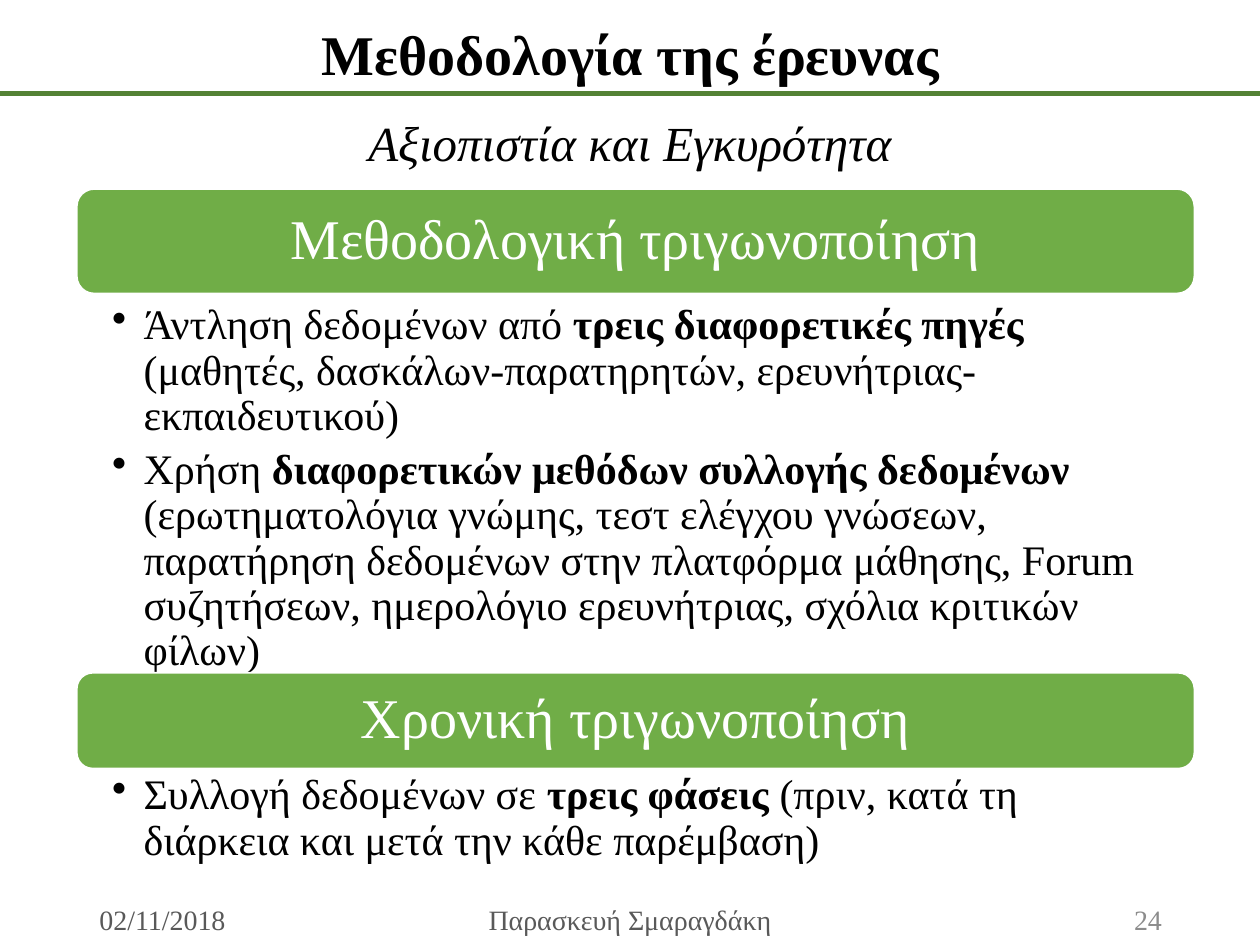
from lxml import etree
from pptx import Presentation, util as u
from pptx.dml.color import RGBColor
from pptx.enum import shapes as sh, text as tx
from pptx.oxml.ns import qn

deck = Presentation()
deck.slide_width, deck.slide_height = u.Inches(10), u.Inches(7.5)
col, row = deck.slide_width / 100, deck.slide_height / 75
slide = deck.slides.add_slide(deck.slide_layouts[6])
mid, left, right = tx.PP_ALIGN.CENTER, tx.PP_ALIGN.LEFT, tx.PP_ALIGN.RIGHT


def hue(code):
    return RGBColor.from_string(code)


def write(frame, paras, align, size, tint, pads=(1, 0.5, 1, 0.5), look={}, para={}, **form):
    sides = ("margin_left", "margin_top", "margin_right", "margin_bottom")
    form = {"word_wrap": True, **form, **{s: int(n * col) for s, n in zip(sides, pads)}}
    for key, val in form.items():
        setattr(frame, key, val)
    for i, parts in enumerate(paras):
        p = frame.paragraphs[0] if i == 0 else frame.add_paragraph()
        for key, val in {"alignment": align, **para}.items():
            setattr(p, key, val)
        for j, part in enumerate(parts):
            run = p.add_run()
            run.text = part
            font = {"name": "Times New Roman", "size": u.Pt(size), "bold": j % 2 == 1, **look}
            for key, val in font.items():
                setattr(run.font, key, val)
            run.font.color.rgb = hue(tint)


themes = [
    (15, 8.3, "Μεθοδολογική τριγωνοποίηση", 23.8, 29.9, [
        ("Άντληση δεδομένων από ", "τρεις διαφορετικές πηγές ",
         "(μαθητές, δασκάλων-παρατηρητών, ερευνήτριας-εκπαιδευτικού)"),
        ("Χρήση ", "διαφορετικών μεθόδων συλλογής δεδομένων ",
         "(ερωτηματολόγια γνώμης, τεστ ελέγχου γνώσεων, παρατήρηση δεδομένων στην "
         "πλατφόρμα μάθησης, Forum συζητήσεων, ημερολόγιο ερευνήτριας, σχόλια κριτικών φίλων)"),
    ]),
    (53.4, 7.6, "Χρονική τριγωνοποίηση", 61.1, 9.6, [
        ("Συλλογή δεδομένων σε ", "τρεις φάσεις ",
         "(πριν, κατά τη διάρκεια και μετά την κάθε παρέμβαση)"),
    ]),
]
edge, span = int(6.1 * col), int(88.7 * col)
for top, high, head, start, deep, points in themes:
    bar = slide.shapes.add_shape(sh.MSO_SHAPE.ROUNDED_RECTANGLE, edge, int(top * row), span, int(high * row))
    bar.shadow.inherit = False
    bar.fill.solid()
    bar.fill.fore_color.rgb = hue("70AD47")
    bar.line.color.rgb = hue("FFFFFF")
    bar.line.width = u.Pt(1)
    write(bar.text_frame, [[head]], mid, 32, "FFFFFF", (1.3,) * 4,
          para={"line_spacing": 0.9}, vertical_anchor=tx.MSO_ANCHOR.MIDDLE)
    body = slide.shapes.add_textbox(edge, int(start * row), span, int(deep * row))
    write(body.text_frame, points, left, 24, "000000", (2.8, 0.3, 1.9, 0.3),
          para={"level": 1, "line_spacing": 0.9, "space_after": u.Pt(4.8)})
    for p in body.text_frame.paragraphs:
        props = p._p.get_or_add_pPr()
        props.set("marL", str(int(2.5 * col)))
        props.set("indent", str(int(-2.5 * col)))
        etree.SubElement(props, qn("a:buChar")).set("char", "•")

rule = slide.shapes.add_connector(sh.MSO_CONNECTOR.STRAIGHT, 0, int(7.4 * row), deck.slide_width, int(7.4 * row))
rule.line.color.rgb = hue("548235")
rule.line.width = u.Pt(3)
etree.SubElement(rule._element.spPr, qn("a:effectLst"))

foot = [
    (6.9, 22.5, "02/11/2018", left, "595959"),
    (33.1, 33.8, "Παρασκευή Σμαραγδάκη", mid, "595959"),
    (70.7, 22.5, "24", right, "8C8C8C"),
]
for x, wide, word, align, tint in foot:
    box = slide.shapes.add_textbox(int(x * col), int(71 * row), int(wide * col), int(4 * row))
    write(box.text_frame, [[word]], align, 16, tint, vertical_anchor=tx.MSO_ANCHOR.MIDDLE)

heads = [
    (28, 8.4, 44, 5.7, "Αξιοπιστία και Εγκυρότητα", 28, {"italic": True}),
    (24.3, 1.1, 51.5, 6.4, "Μεθοδολογία της έρευνας", 32, {"bold": True}),
]
for x, y, wide, high, word, size, look in heads:
    box = slide.shapes.add_textbox(int(x * col), int(y * row), int(wide * col), int(high * row))
    write(box.text_frame, [[word]], mid, size, "000000", look=look,
          word_wrap=False, auto_size=tx.MSO_AUTO_SIZE.SHAPE_TO_FIT_TEXT)

deck.save("out.pptx")
